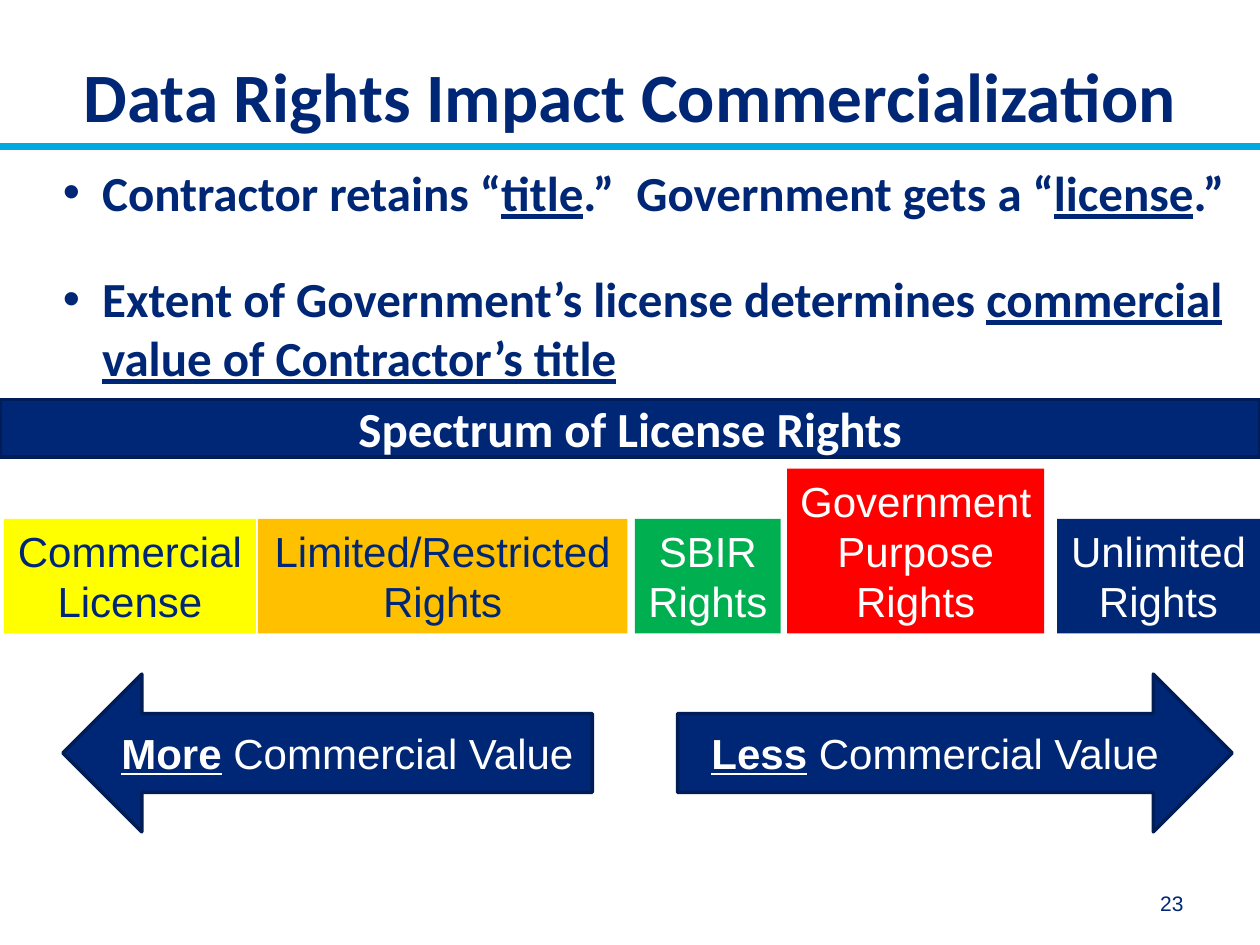
from lxml.etree import SubElement
from pptx import Presentation
from pptx.dml.color import RGBColor
from pptx.enum.shapes import MSO_CONNECTOR, MSO_SHAPE
from pptx.enum.text import MSO_ANCHOR, PP_ALIGN
from pptx.oxml.ns import qn
from pptx.util import Cm, Pt

NAVY, EDGE, SKY, WHITE = "002776", "001D57", "00A9E0", "FFFFFF"


def tint(code):
    return RGBColor.from_string(code)


class Deck:
    """Holds the style and the current slide, and draws each kind of element."""

    def __init__(self):
        self.deck = Presentation()
        self.deck.slide_width, self.deck.slide_height = Cm(25.4), Cm(19.05)
        self.slide = self.deck.slides.add_slide(self.deck.slide_layouts[5])
        self.shapes = self.slide.shapes

    def style(self, part, size, face="Arial", color=NAVY, bold=False):
        font = part.font
        font.size, font.name, font.bold = Pt(size), face, bold
        font.color.rgb = tint(color)

    def frame(self, shape, anchor, side=0.25, edge=0.13):
        frame = shape.text_frame
        frame.word_wrap = True
        frame.vertical_anchor = anchor
        frame.margin_left = frame.margin_right = Cm(side)
        frame.margin_top = frame.margin_bottom = Cm(edge)
        return frame

    def label(self, frame, text, align, size, **style):
        frame.text = text
        for para in frame.paragraphs:
            para.alignment = align
            for run in para.runs:
                self.style(run, size, **style)

    def title(self, text, *box):
        shape = self.shapes.title
        shape.left, shape.top, shape.width, shape.height = map(Cm, box)
        frame = self.frame(shape, MSO_ANCHOR.BOTTOM, side=0)
        self.label(frame, text, PP_ALIGN.CENTER, 39.6, face="Calibri", bold=True)

    def rule(self, top):
        line = self.shapes.add_connector(
            MSO_CONNECTOR.STRAIGHT, 0, Cm(top), self.deck.slide_width, Cm(top))
        line.line.color.rgb, line.line.width = tint(SKY), Pt(4)
        SubElement(line._element.spPr, qn("a:effectLst"))

    def points(self, items, *box):
        shape = self.shapes.add_textbox(*map(Cm, box))
        frame = self.frame(shape, MSO_ANCHOR.TOP, side=0, edge=0)
        for index, item in enumerate(items):
            para = frame.add_paragraph() if index else frame.paragraphs[0]
            props = para._p.get_or_add_pPr()
            props.set("marL", str(Cm(0.79)))
            props.set("indent", str(Cm(-0.79)))
            SubElement(props, qn("a:buFont")).set("typeface", "Arial")
            SubElement(props, qn("a:buChar")).set("char", "•")
            para.space_before = Pt(3 if index else 0)
            para.space_after = Pt(12 if index else 24)
            for spot, words in enumerate(item.split("_")):
                if words:
                    run = para.add_run()
                    run.text = words
                    self.style(run, 28, "Calibri", bold=True)
                    run.font.underline = spot % 2 == 1

    def note(self, text, *box):
        shape = self.shapes.add_textbox(*map(Cm, box))
        frame = self.frame(shape, MSO_ANCHOR.BOTTOM)
        self.label(frame, text, PP_ALIGN.RIGHT, 12)

    def block(self, kind, fill, box, edge=None):
        shape = self.shapes.add_shape(kind, *map(Cm, box))
        shape.shadow.inherit = False
        shape.fill.solid()
        shape.fill.fore_color.rgb = tint(fill)
        if edge:
            shape.line.color.rgb, shape.line.width = tint(edge), Pt(2)
        else:
            shape.line.fill.background()
        return shape

    def band(self, text, *box):
        shape = self.block(MSO_SHAPE.RECTANGLE, NAVY, box, EDGE)
        frame = self.frame(shape, MSO_ANCHOR.MIDDLE)
        self.label(frame, text, PP_ALIGN.CENTER, 28,
                   face="Calibri", color=WHITE, bold=True)

    def right(self, text, fill, color, left, width, base):
        high = 0.29 + 1.01 * len(text.split("\n"))
        box = left, base - high, width, high
        shape = self.block(MSO_SHAPE.RECTANGLE, fill, box)
        frame = self.frame(shape, MSO_ANCHOR.TOP)
        self.label(frame, text, PP_ALIGN.CENTER, 24, color=color)

    def arrow(self, kind, lead, rest, *box):
        shape = self.block(kind, NAVY, box, EDGE)
        para = self.frame(shape, MSO_ANCHOR.MIDDLE).paragraphs[0]
        para.alignment = PP_ALIGN.CENTER
        for words, strong in (lead, True), (rest, False):
            run = para.add_run()
            run.text = words
            self.style(run, 24, color=WHITE, bold=strong)
            run.font.underline = strong


def main():
    page = Deck()
    page.rule(2.95)
    page.title("Data Rights Impact Commercialization", 1.27, 0.36, 22.86, 2.51)
    page.points(["Contractor retains “_title_.”  Government gets a “_license_.”",
                 "Extent of Government’s license determines "
                 "_commercial value of Contractor’s title_"],
                1.27, 3.28, 23.67, 13.61)
    page.note("23", 21.44, 17.91, 2.67, 0.69)
    page.arrow(MSO_SHAPE.RIGHT_ARROW, "Less", " Commercial Value",
               13.66, 13.59, 11.18, 3.18)
    page.arrow(MSO_SHAPE.LEFT_ARROW, "More", " Commercial Value",
               1.27, 13.59, 10.67, 3.18)
    for text, fill, color, left, width in (
            ("Commercial\nLicense", "FFFF00", NAVY, 0.08, 5.08),
            ("Limited/Restricted\nRights", "FFC000", NAVY, 5.2, 7.45),
            ("SBIR\nRights", "00B050", WHITE, 12.8, 2.94),
            ("Government\nPurpose\nRights", "FF0000", WHITE, 15.87, 5.18),
            ("Unlimited\nRights", NAVY, WHITE, 21.31, 4.09)):
        page.right(text, fill, color, left, width, 12.77)
    page.band("Spectrum of License Rights", 0, 8.05, 25.4, 1.16)
    page.deck.save("out.pptx")


if __name__ == "__main__":
    main()
